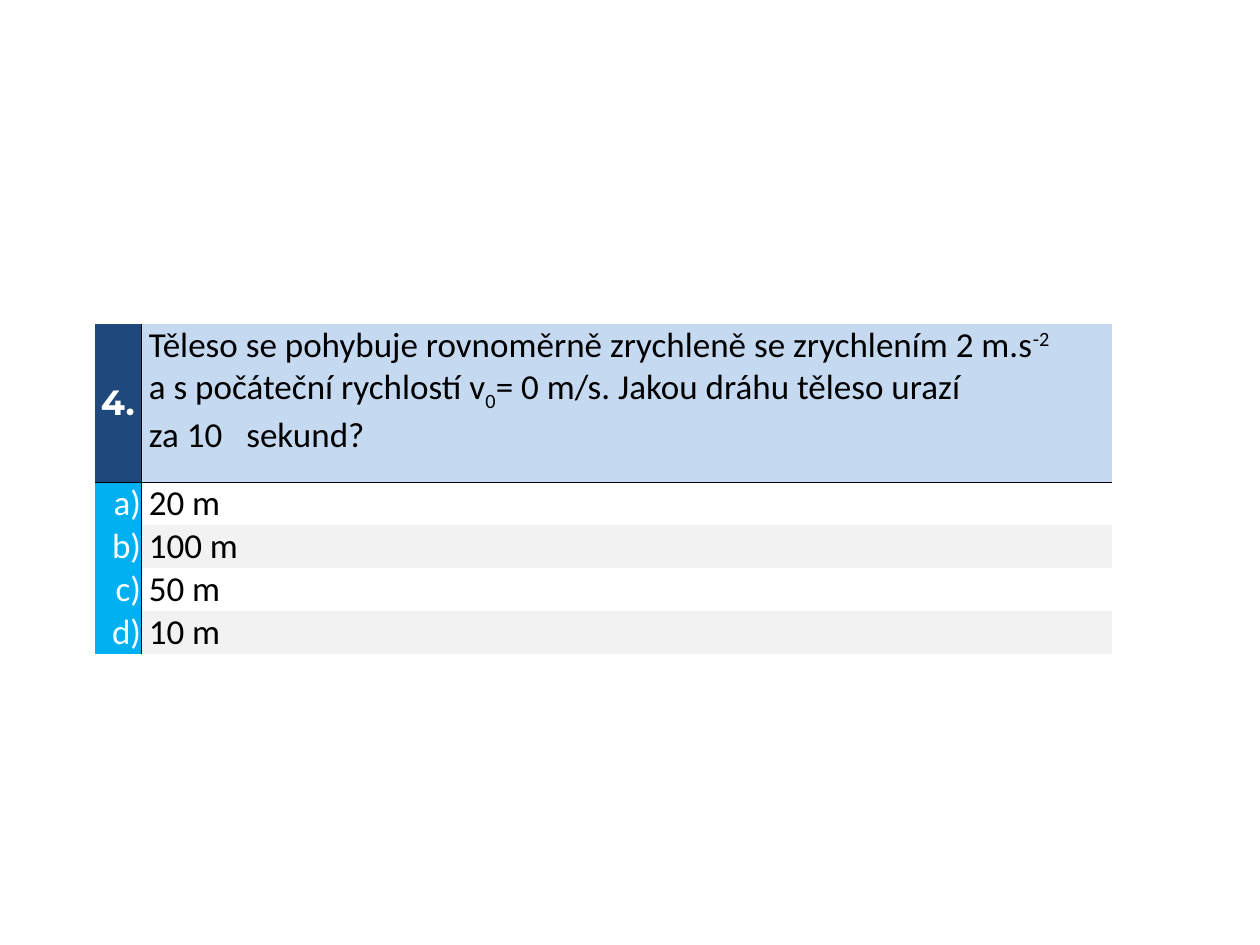
import pptx
import pptx.util
import pptx.dml.color
import pptx.enum.text
import pptx.oxml.ns
import lxml.etree

Pt = pptx.util.Pt
RGB = pptx.dml.color.RGBColor
ALIGN = pptx.enum.text.PP_ALIGN
ANCHOR = pptx.enum.text.MSO_ANCHOR
qn = pptx.oxml.ns.qn

COLORS = {"navy": "1F497D", "pale": "C5D9F1", "cyan": "00B0F0",
          "band": "F2F2F2", "black": "000000", "white": "FFFFFF"}
SIZE = 20
LABEL_W, QUESTION_H, ANSWER_H = 26.6, 90.7, 24.6
INDENT, TAB = 4.5, 55.7

# Each line is a list of (text, baseline shift in percent)
QUESTION = [
    [("Těleso se pohybuje rovnoměrně zrychleně se zrychlením 2 m.s", 0), ("-2", 30)],
    [("a s počáteční rychlostí v", 0), ("0", -25),
     ("= 0 m/s. Jakou dráhu těleso urazí", 0)],
    [("za 10\tsekund?", 0)],
]
ANSWERS = [("a)", "20 m"), ("b)", "100 m"), ("c)", "50 m"), ("d)", "10 m")]


def set_borders(cell, sides):
    """Draw thin black lines on the named sides and none on the others."""
    tcPr = cell._tc.get_or_add_tcPr()
    for i, side in enumerate("LRTB"):
        ln = lxml.etree.Element(qn("a:ln" + side), w=str(Pt(0.5)))
        if side in sides:
            fill = lxml.etree.SubElement(ln, qn("a:solidFill"))
            lxml.etree.SubElement(fill, qn("a:srgbClr"), val=COLORS["black"])
        else:
            lxml.etree.SubElement(ln, qn("a:noFill"))
        tcPr.insert(i, ln)


def add_tab_stop(p, pos):
    tabs = lxml.etree.SubElement(p._p.get_or_add_pPr(), qn("a:tabLst"))
    lxml.etree.SubElement(tabs, qn("a:tab"), pos=str(Pt(pos)), algn="l")


def fill_cell(cell, lines, fill, color, sides, anchor, align=ALIGN.LEFT,
              indent=0, font="Calibri", bold=False):
    cell.margin_left = Pt(indent)
    cell.margin_right = cell.margin_top = cell.margin_bottom = Pt(0)
    cell.vertical_anchor = anchor
    if fill:
        cell.fill.solid()
        cell.fill.fore_color.rgb = RGB.from_string(COLORS[fill])
    else:
        cell.fill.background()
    set_borders(cell, sides)
    tf = cell.text_frame
    for i, line in enumerate(lines):
        p = tf.add_paragraph() if i else tf.paragraphs[0]
        p.alignment = align
        if any("\t" in text for text, _ in line):
            add_tab_stop(p, TAB)
        p.font.name, p.font.size, p.font.bold = font, Pt(SIZE), bold
        p.font.color.rgb = RGB.from_string(COLORS[color])
        for text, shift in line:
            r = p.add_run()
            r.text = text
            if shift:
                r.font._element.set("baseline", str(shift * 1000))


def add_quiz_table(s, left, top, width):
    height = QUESTION_H + ANSWER_H * len(ANSWERS)
    table = s.shapes.add_table(len(ANSWERS) + 1, 2, Pt(left), Pt(top),
                               Pt(width), Pt(height)).table
    table.first_row = table.horz_banding = False
    table.columns[0].width = Pt(LABEL_W)
    table.columns[1].width = Pt(width - LABEL_W)
    for i, row in enumerate(table.rows):
        row.height = Pt(ANSWER_H if i else QUESTION_H)

    # Question row
    fill_cell(table.cell(0, 0), [[("4.", 0)]], "navy", "white", "RB",
              ANCHOR.MIDDLE, ALIGN.CENTER, font="Montserrat", bold=True)
    fill_cell(table.cell(0, 1), QUESTION, "pale", "black", "LB",
              ANCHOR.TOP, indent=INDENT)

    # Answer rows, every second one shaded
    for i, (label, answer) in enumerate(ANSWERS, start=1):
        top_side = "T" if i == 1 else ""
        fill_cell(table.cell(i, 0), [[(label, 0)]], "cyan", "white",
                  "R" + top_side, ANCHOR.MIDDLE, ALIGN.RIGHT)
        fill_cell(table.cell(i, 1), [[(answer, 0)]],
                  None if i % 2 else "band", "black", "L" + top_side,
                  ANCHOR.BOTTOM, indent=INDENT)


def main():
    prs = pptx.Presentation()
    prs.slide_width, prs.slide_height = Pt(720), Pt(540)
    s = prs.slides.add_slide(prs.slide_layouts[6])
    add_quiz_table(s, 54, 185, 581.4)
    prs.save("out.pptx")


if __name__ == "__main__":
    main()
